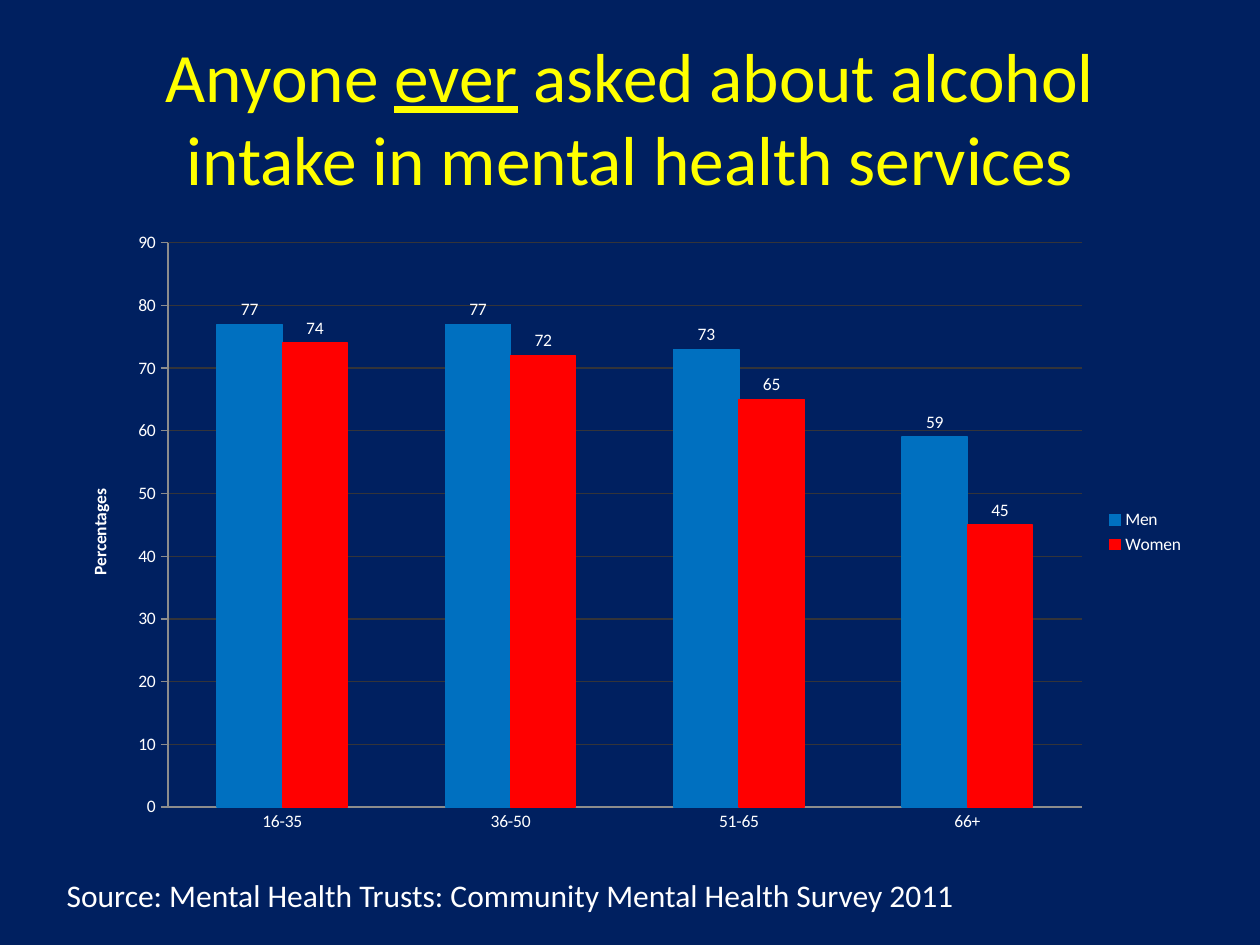
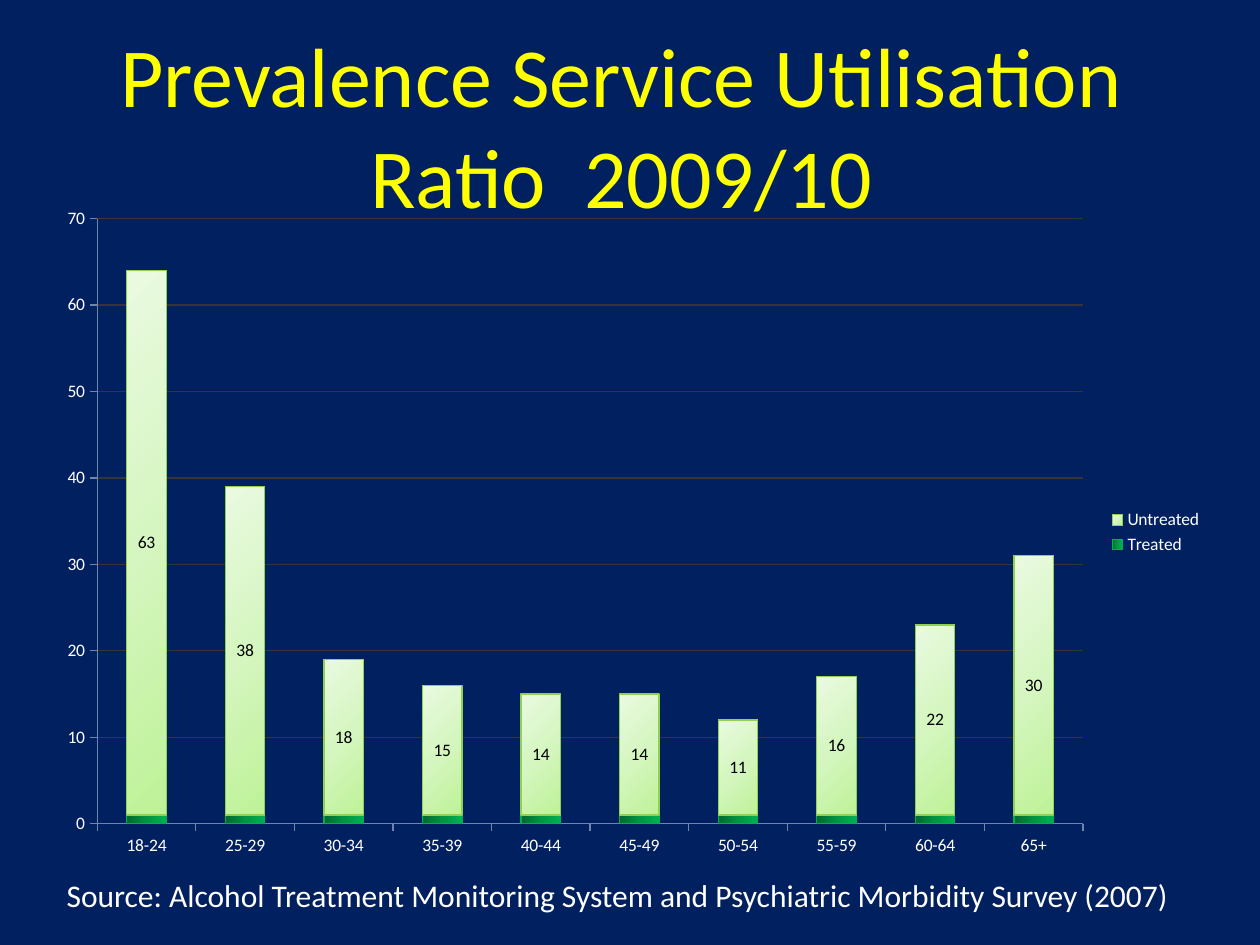
import pptx
import pptx.chart.data
import pptx.dml.color
import pptx.enum.chart
import pptx.enum.text
import pptx.oxml
import pptx.oxml.ns
import pptx.util

Pt = pptx.util.Pt
RGBColor = pptx.dml.color.RGBColor
ChartType = pptx.enum.chart.XL_CHART_TYPE
TickMark = pptx.enum.chart.XL_TICK_MARK
LabelPosition = pptx.enum.chart.XL_LABEL_POSITION

NAVY = RGBColor(0x00, 0x20, 0x60)
YELLOW = RGBColor(0xFF, 0xFF, 0x00)
WHITE = RGBColor(0xFF, 0xFF, 0xFF)
BLACK = RGBColor(0x00, 0x00, 0x00)
BLUE = RGBColor(0x00, 0x70, 0xC0)
RED = RGBColor(0xFF, 0x00, 0x00)
GREEN = RGBColor(0x00, 0xB0, 0x50)
LIME = RGBColor(0x92, 0xD0, 0x50)
GRID = RGBColor(0x34, 0x34, 0x39)
GREY = RGBColor(0x8C, 0x8C, 0x8C)
STEEL = RGBColor(0x6C, 0x86, 0xB0)
DARK_GREENS = (RGBColor(0x00, 0x68, 0x2F), RGBColor(0x00, 0x94, 0x43), GREEN)
PALE_GREENS = (RGBColor(0xBE, 0xF2, 0x97), RGBColor(0xD5, 0xF6, 0xC0),
               RGBColor(0xEA, 0xFA, 0xE0))

TITLE_SIZE = (648, 90)
SOURCE_LEFT, SOURCE_TOP, SOURCE_HEIGHT = 31, 497, 29
CHART_FONT = {"name": "Calibri", "size": Pt(10)}
SOURCE_FONT = {"name": "Calibri", "size": Pt(18)}
BAR_LINE = Pt(0.75)


def style(target, formats):
    for name, value in formats.items():
        setattr(target, name, value)


def style_font(font, formats, color):
    style(font, formats)
    font.color.rgb = color


def style_line(line, color):
    line.color.rgb = color
    line.width = BAR_LINE


def add_page(deck):
    page = deck.slides.add_slide(deck.slide_layouts[6])
    page.background.fill.solid()
    page.background.fill.fore_color.rgb = NAVY
    return page


def add_text(page, place, spans, formats, color, frame_formats, align):
    """Add one paragraph; spans holds pairs of text and underline."""
    box = page.shapes.add_textbox(*map(Pt, place))
    style(box.text_frame, frame_formats)
    para = box.text_frame.paragraphs[0]
    para.alignment = align
    for text, underline in spans:
        span = para.add_run()
        span.text = text
        style_font(span.font, {**formats, "underline": underline}, color)


def add_title(page, left, top, size, spans):
    add_text(page, (left, top, *TITLE_SIZE), spans,
             {"name": "Calibri", "size": Pt(size)}, YELLOW,
             {"word_wrap": True, "vertical_anchor": pptx.enum.text.MSO_ANCHOR.MIDDLE},
             pptx.enum.text.PP_ALIGN.CENTER)


def add_source(page, width, text):
    add_text(page, (SOURCE_LEFT, SOURCE_TOP, width, SOURCE_HEIGHT),
             [(text, None)], SOURCE_FONT, WHITE,
             {"word_wrap": False,
              "auto_size": pptx.enum.text.MSO_AUTO_SIZE.SHAPE_TO_FIT_TEXT},
             pptx.enum.text.PP_ALIGN.LEFT)


def add_chart(page, place, kind, categories, values, axis_color, category_tick):
    """Add a column chart with the shared axes, grid and legend."""
    data = pptx.chart.data.CategoryChartData()
    data.categories = categories
    for name, numbers in values.items():
        data.add_series(name, numbers)
    chart = page.shapes.add_chart(kind, *map(Pt, place), data).chart
    style(chart, {"has_title": False, "has_legend": True})
    style_font(chart.font, CHART_FONT, WHITE)
    style(chart.legend, {"position": pptx.enum.chart.XL_LEGEND_POSITION.RIGHT,
                         "include_in_layout": False})
    style(chart.plots[0], {"gap_width": 150, "vary_by_categories": False})
    ticks = ((chart.category_axis, category_tick),
             (chart.value_axis, TickMark.OUTSIDE))
    for axis, tick in ticks:
        style(axis, {"major_tick_mark": tick, "minor_tick_mark": TickMark.NONE})
        style_line(axis.format.line, axis_color)
    style(chart.value_axis, {"minimum_scale": 0, "major_unit": 10,
                             "has_major_gridlines": True})
    style_line(chart.value_axis.major_gridlines.format.line, GRID)
    return chart


def title_value_axis(axis, text):
    title = axis.axis_title
    span = title.text_frame.paragraphs[0].add_run()
    span.text = text
    style_font(span.font, {**CHART_FONT, "bold": True}, WHITE)
    body = title.text_frame._txBody.find(pptx.oxml.ns.qn("a:bodyPr"))
    body.set("rot", "-5400000")
    body.set("vert", "horz")


def fill_solid(series, color):
    series.format.fill.solid()
    series.format.fill.fore_color.rgb = color
    style_line(series.format.line, color)


def fill_gradient(series, colors, degrees, line_color):
    """Fill with evenly spaced stops; degrees run clockwise."""
    style_line(series.format.line, line_color)
    step = 100000 // (len(colors) - 1)
    stops = "".join(
        f'<a:gs pos="{index * step}"><a:srgbClr val="{color}"/></a:gs>'
        for index, color in enumerate(colors))
    gradient = pptx.oxml.parse_xml(
        f'<a:gradFill {pptx.oxml.ns.nsdecls("a")} rotWithShape="1">'
        f'<a:gsLst>{stops}</a:gsLst>'
        f'<a:lin ang="{degrees * 60000}" scaled="1"/></a:gradFill>')
    series._element.spPr.insert(0, gradient)


def label_values(series, position, color):
    labels = series.data_labels
    style(labels, {"show_value": True, "position": position})
    style_font(labels.font, CHART_FONT, color)


def build_asked_page(deck):
    page = add_page(deck)
    add_title(page, 36, 21.6, 39.6, [
        ("Anyone ", None), ("ever", True),
        (" asked about alcohol intake in mental health services", None)])
    chart = add_chart(
        page, (36, 126, 648, 356.4), ChartType.COLUMN_CLUSTERED,
        ("16-35", "36-50", "51-65", "66+"),
        {"Men": (77, 77, 73, 59), "Women": (74, 72, 65, 45)},
        GREY, TickMark.NONE)
    title_value_axis(chart.value_axis, "Percentages")
    for series, color in zip(chart.plots[0].series, (BLUE, RED)):
        fill_solid(series, color)
        label_values(series, LabelPosition.OUTSIDE_END, WHITE)
    add_source(page, 528,
               "Source: Mental Health Trusts: Community Mental Health Survey 2011")


def build_ratio_page(deck):
    page = add_page(deck)
    add_title(page, 31, 26, 48,
              [("Prevalence Service Utilisation Ratio  2009/10", None)])
    untreated_counts = (63, 38, 18, 15, 14, 14, 11, 16, 22, 30)
    chart = add_chart(
        page, (25.2, 111.6, 669.2, 385.2), ChartType.COLUMN_STACKED,
        ("18-24", "25-29", "30-34", "35-39", "40-44",
         "45-49", "50-54", "55-59", "60-64", "65+"),
        {"Treated": (1,) * len(untreated_counts), "Untreated": untreated_counts},
        STEEL, TickMark.OUTSIDE)
    treated, untreated = chart.plots[0].series
    fill_gradient(treated, DARK_GREENS, 0, GREEN)
    fill_gradient(untreated, PALE_GREENS, 225, LIME)
    label_values(untreated, LabelPosition.CENTER, BLACK)
    add_source(page, 648, "Source: Alcohol Treatment Monitoring System and "
                          "Psychiatric Morbidity Survey (2007)")


def main():
    deck = pptx.Presentation()
    style(deck, {"slide_width": Pt(720), "slide_height": Pt(540)})
    build_asked_page(deck)
    build_ratio_page(deck)
    deck.save("out.pptx")


if __name__ == "__main__":
    main()
